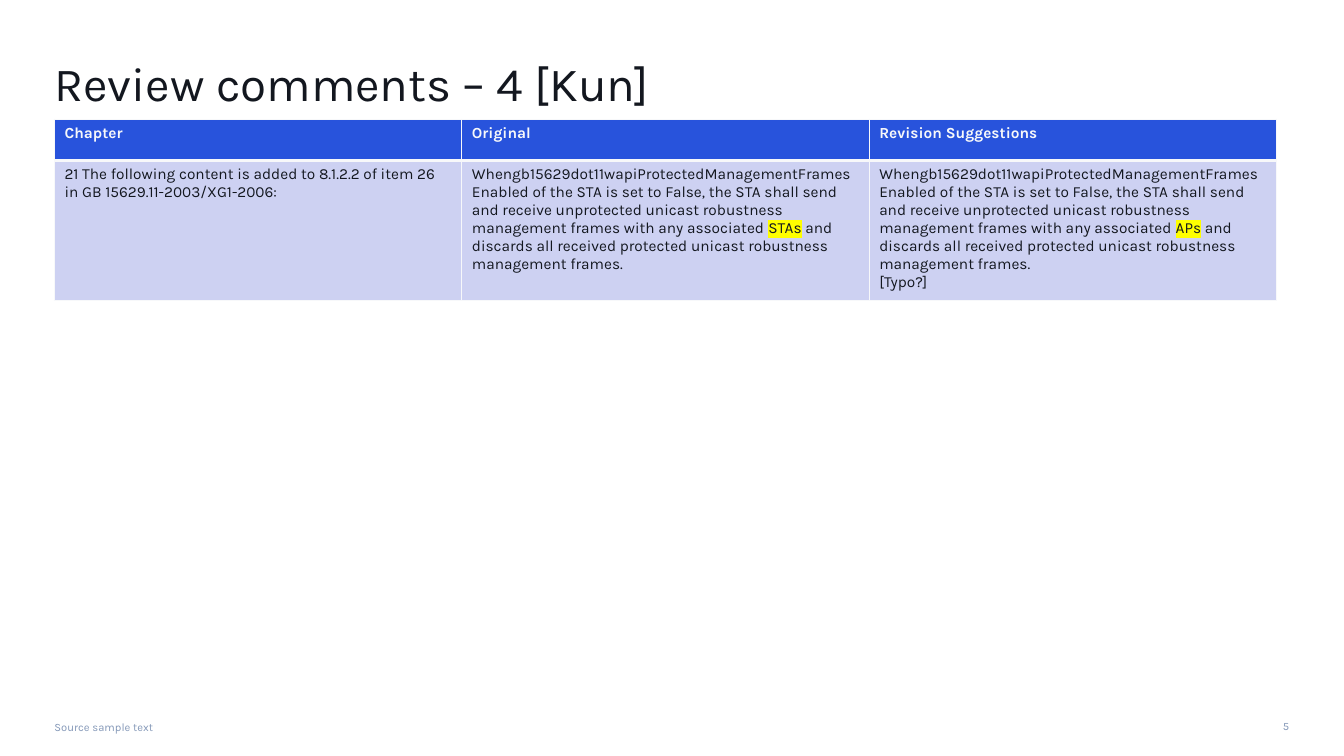
"""Build the review comments slide with its table of suggested revisions."""
from lxml.etree import SubElement
from pptx import Presentation
from pptx.dml.color import RGBColor
from pptx.enum.text import MSO_ANCHOR, PP_ALIGN
from pptx.oxml import parse_xml
from pptx.oxml.ns import nsdecls, qn
from pptx.util import Pt

FONT = "Karla"
INK = RGBColor(0x13, 0x17, 0x1F)
MUTED = RGBColor(0x84, 0x98, 0xB8)
PALE = RGBColor(0xF7, 0xF8, 0xFA)
BLUE = RGBColor(0x28, 0x53, 0xDC)
LILAC = RGBColor(0xCD, 0xD1, 0xF2)
YELLOW = RGBColor(0xFF, 0xFF, 0x00)

LEFT = 38.9
LABELS = [
    ("Review comments – 4 [Kun]", (LEFT, 44.6, 880.6, 34.6), 34, INK, 0.84, 0, PP_ALIGN.LEFT, True),
    ("Source sample text", (LEFT, 514.8, 825.8, 9.4), 8, MUTED, 0.96, 2.2, PP_ALIGN.LEFT, True),
    ("5", (910.8, 512.6, 10.1, 10.8), 8, MUTED, 1.25, 0, PP_ALIGN.RIGHT, False),
]

START = (
    "Whengb15629dot11wapiProtectedManagementFramesEnabled of the STA is set to False, "
    "the STA shall send and receive unprotected unicast robustness management frames "
    "with any associated "
)
END = " and discards all received protected unicast robustness management frames."
MARKED = ("STAs", "APs")
HEADS = ["Chapter", "Original", "Revision Suggestions"]
BODY = [
    [["21 The following content is added to 8.1.2.2 of item 26 in GB 15629.11-2003/XG1-2006:"]],
    [[START, "STAs", END]],
    [[START, "APs", END], ["[Typo?]"]],
]
ROWS = [(HEADS, 29.5, BLUE, PALE, True), (BODY, 98, LILAC, INK, False)]
TOP, WIDTH = 85.2, 873


def style(para, size, color, bold=False):
    font = para.font
    font.name, font.size, font.bold = FONT, Pt(size), bold
    font.color.rgb = color


def label(slide, text, place, size, color, space, after, align, wrap):
    frame = slide.shapes.add_textbox(*map(Pt, place)).text_frame
    frame.margin_left = frame.margin_right = frame.margin_top = frame.margin_bottom = 0
    frame.vertical_anchor, frame.word_wrap = MSO_ANCHOR.BOTTOM, wrap
    para = frame.paragraphs[0]
    para.text, para.alignment = text, align
    para.line_spacing, para.space_after = space, Pt(after)
    style(para, size, color)


def mark(run):
    light = SubElement(run.font._element, qn("a:highlight"))
    SubElement(light, qn("a:srgbClr")).set("val", str(YELLOW))


def edge(cell, widths):
    props = cell._tc.get_or_add_tcPr()
    for spot, (side, width) in enumerate(zip("LRTB", widths)):
        props.insert(spot, parse_xml(
            f'<a:ln{side} {nsdecls("a")} w="{Pt(width)}"><a:solidFill>'
            f'<a:srgbClr val="{PALE}"/></a:solidFill></a:ln{side}>'))


def fill(cell, paras, back, color, bold):
    cell.fill.solid()
    cell.fill.fore_color.rgb = back
    frame = cell.text_frame
    for spot, parts in enumerate(paras):
        para = frame.add_paragraph() if spot else frame.paragraphs[0]
        style(para, 11, color, bold)
        for part in parts:
            run = para.add_run()
            run.text = part
            if part in MARKED:
                mark(run)


def main():
    deck = Presentation()
    deck.slide_width, deck.slide_height = Pt(960), Pt(540)
    slide = deck.slides.add_slide(deck.slide_layouts[6])
    for item in LABELS:
        label(slide, *item)
    tall = sum(row[1] for row in ROWS)
    table = slide.shapes.add_table(
        len(ROWS), len(HEADS), Pt(LEFT), Pt(TOP), Pt(WIDTH), Pt(tall)).table
    for col in table.columns:
        col.width = Pt(WIDTH / len(HEADS))
    for y, (cells, height, back, color, bold) in enumerate(ROWS):
        table.rows[y].height = Pt(height)
        for x, text in enumerate(cells):
            cell = table.cell(y, x)
            fill(cell, [[text]] if bold else text, back, color, bold)
            edge(cell, (1, 1, 1, 3) if bold else (1, 1, 3, 1))
    deck.save("out.pptx")


if __name__ == "__main__":
    main()
